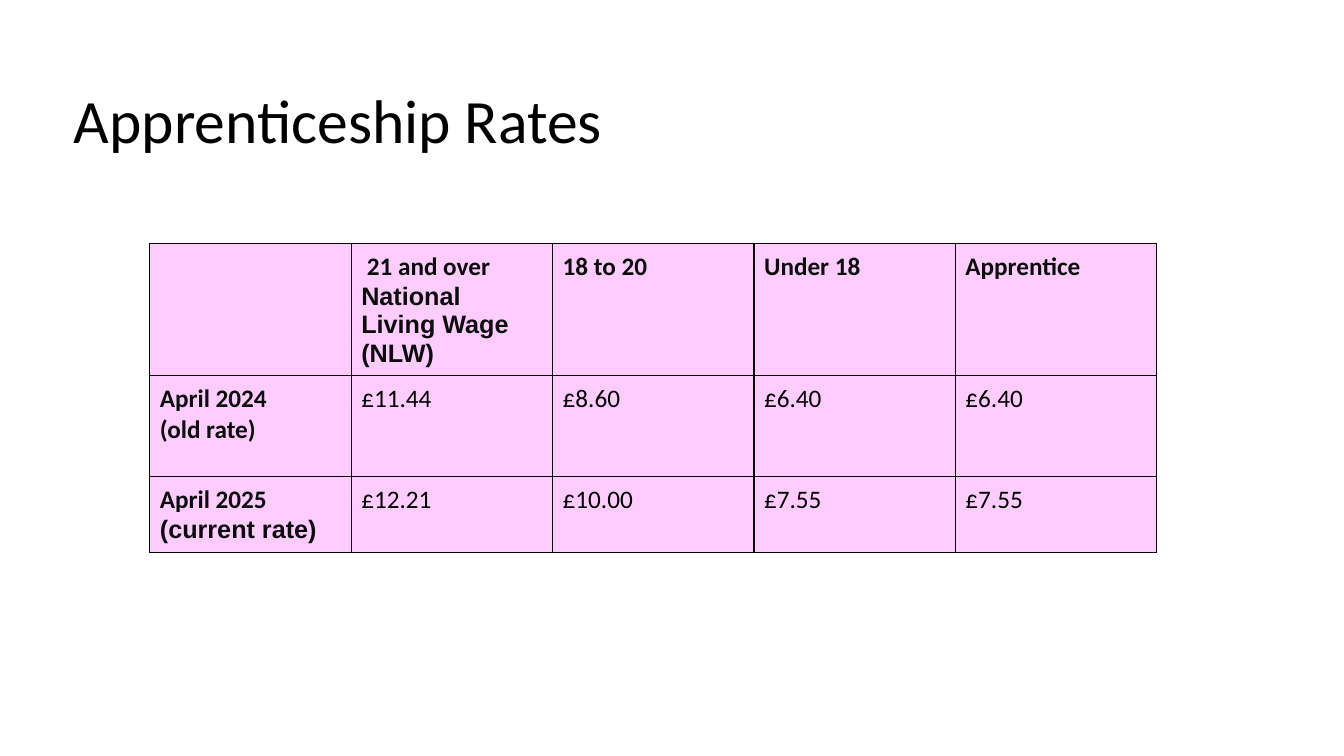
from pptx import Presentation
from pptx.dml.color import RGBColor
from pptx.enum.text import MSO_ANCHOR, PP_ALIGN
from pptx.oxml import parse_xml
from pptx.oxml.ns import nsdecls
from pptx.util import Pt


def color(value):
    """Turn a hex string into a colour."""
    return RGBColor.from_string(value)


class RateSlide:
    """Hold the style and the current slide."""

    black = "000000"
    heading_ink = "0B0C0C"
    cell_fill = "FFCCFF"
    body_font = "Calibri"
    note_font = "Arial"

    def __init__(self, presentation):
        """Add a title-only slide."""
        self.slide = presentation.slides.add_slide(presentation.slide_layouts[5])

    def style(self, paragraph, size, ink, bold=False, name=body_font):
        """Format one paragraph."""
        paragraph.alignment = PP_ALIGN.LEFT
        font = paragraph.font
        font.size, font.bold, font.name = Pt(size), bold, name
        font.color.rgb = color(ink)

    def title(self, text, left, top, width, height):
        """Place and format the title."""
        shape = self.slide.shapes.title
        shape.left, shape.top = Pt(left), Pt(top)
        shape.width, shape.height = Pt(width), Pt(height)
        frame = shape.text_frame
        frame.text = text
        frame.word_wrap = True
        frame.vertical_anchor = MSO_ANCHOR.MIDDLE
        frame.paragraphs[0].line_spacing = 0.9
        self.style(frame.paragraphs[0], 44, self.black)

    def border(self, cell):
        """Draw a thin line on every side of a cell."""
        properties = cell._tc.get_or_add_tcPr()
        for side in ("lnL", "lnR", "lnT", "lnB"):
            properties.append(parse_xml(
                f'<a:{side} {nsdecls("a")} w="{Pt(1)}"><a:solidFill>'
                f'<a:srgbClr val="{self.black}"/></a:solidFill></a:{side}>'))

    def cell(self, cell, text, heading):
        """Fill and format one table cell."""
        self.border(cell)
        cell.fill.solid()
        cell.fill.fore_color.rgb = color(self.cell_fill)
        cell.margin_left, cell.margin_right = Pt(7.2), Pt(12)
        cell.margin_top = cell.margin_bottom = Pt(5.8)
        cell.text = text
        ink = self.heading_ink if heading else self.black
        for paragraph in cell.text_frame.paragraphs:
            is_note = paragraph.text in ARIAL_NOTES
            name = self.note_font if is_note else self.body_font
            self.style(paragraph, 18, ink, heading, name)

    def table(self, rows, left, top, column_width, row_heights):
        """Add a table whose first row and column are headings."""
        columns = len(rows[0])
        table = self.slide.shapes.add_table(
            len(rows), columns, Pt(left), Pt(top),
            Pt(column_width * columns), Pt(sum(row_heights))).table
        for row, height in zip(table.rows, row_heights):
            row.height = Pt(height)
        for row_index, row in enumerate(rows):
            for column_index, text in enumerate(row):
                heading = row_index == 0 or column_index == 0
                self.cell(table.cell(row_index, column_index), text, heading)


NLW_NOTE = "National Living Wage (NLW)"
CURRENT_NOTE = "(current rate)"
ARIAL_NOTES = (NLW_NOTE, CURRENT_NOTE)
RATES = [
    ["", f" 21 and over\n{NLW_NOTE}", "18 to 20", "Under 18", "Apprentice"],
    ["April 2024\n(old rate)", "£11.44", "£8.60", "£6.40", "£6.40"],
    [f"April 2025\n{CURRENT_NOTE}", "£12.21", "£10.00", "£7.55", "£7.55"],
]


def main():
    """Build and save the slide."""
    presentation = Presentation()
    presentation.slide_width, presentation.slide_height = Pt(960), Pt(540)
    slide = RateSlide(presentation)
    slide.title("Apprenticeship Rates", 45.5, 36, 828, 104.4)
    slide.table(RATES, 107, 174.2, 143.86, [94.3, 72, 54])
    presentation.save("out.pptx")


if __name__ == "__main__":
    main()
